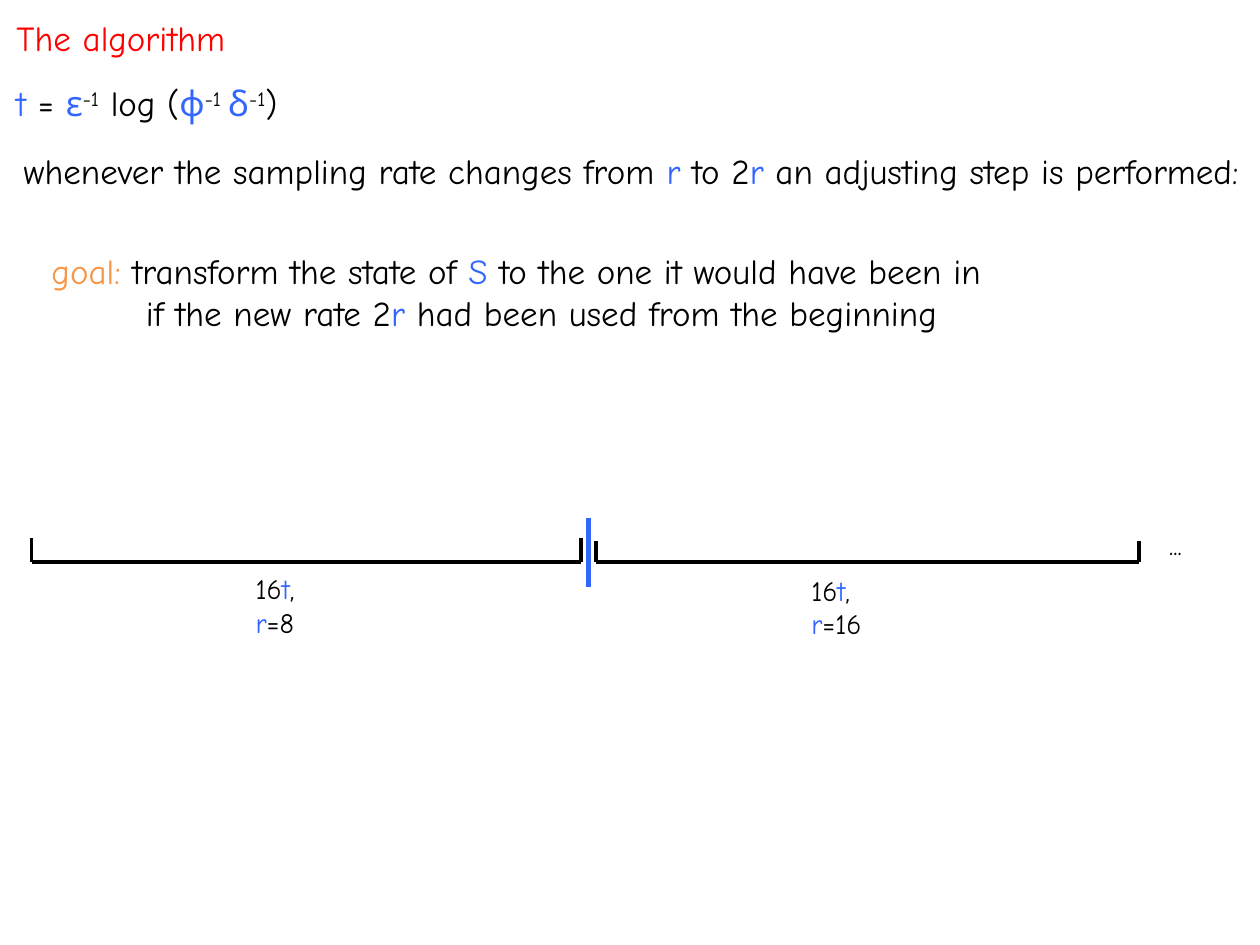
from lxml.etree import SubElement
from pptx import Presentation
from pptx.dml.color import RGBColor
from pptx.enum.shapes import MSO_CONNECTOR
from pptx.enum.text import MSO_ANCHOR, MSO_AUTO_SIZE, PP_ALIGN
from pptx.oxml.ns import qn
from pptx.util import Inches, Pt

BLACK = RGBColor(0x00, 0x00, 0x00)
BLUE = RGBColor(0x33, 0x66, 0xFF)
RED = RGBColor(0xFF, 0x00, 0x00)
ORANGE = RGBColor(0xF7, 0x96, 0x46)
FONT = "Comic Neue"
AXIS_Y = 4.46


def add_span(paragraph, text, size, color=BLACK, raised=False):
    span = paragraph.add_run()
    span.text = text
    span.font.color.rgb = color
    for name, value in {"name": FONT, "size": Pt(size)}.items():
        setattr(span.font, name, value)
    if raised:
        span.font._element.set("baseline", "30000")


def write_text(box, lines, size, hanging=0):
    """Fill box; each line is a list of (text, color, raised) spans.

    Lines after the first are indented by hanging inches.
    """
    frame = box.text_frame
    settings = {
        "word_wrap": True,
        "auto_size": MSO_AUTO_SIZE.NONE,
        "vertical_anchor": MSO_ANCHOR.TOP,
    }
    for name, value in settings.items():
        setattr(frame, name, value)
    for number, spans in enumerate(lines):
        paragraph = frame.add_paragraph() if number else frame.paragraphs[0]
        paragraph.alignment = PP_ALIGN.LEFT
        if number and hanging:
            paragraph._p.get_or_add_pPr().set("marL", str(Inches(hanging)))
        for span in spans:
            add_span(paragraph, span[0], size, *span[1:])


def add_text(page, place, lines, size=20, hanging=0):
    box = page.shapes.add_textbox(*map(Inches, place))
    write_text(box, lines, size, hanging)


def add_line(shapes, start, end, color=BLACK, width=2):
    line = shapes.add_connector(
        MSO_CONNECTOR.STRAIGHT, *map(Inches, (*start, *end)))
    line.line.color.rgb = color
    line.line.width = Pt(width)
    SubElement(line._element.spPr, qn("a:effectLst"))


def add_interval(page, left, right, tick_top):
    """Draw a time interval as a base line with a tick at both ends."""
    shapes = page.shapes.add_group_shape().shapes
    add_line(shapes, (left, AXIS_Y), (right, AXIS_Y))
    for x in (left, right):
        add_line(shapes, (x, AXIS_Y), (x, tick_top))


def add_rate_label(page, place, rate):
    add_text(page, place, [
        [("16",), ("t", BLUE), (",",)],
        [("r", BLUE), (f"={rate}",)],
    ], size=16)


def add_title(page, text):
    title = page.shapes.title
    place = {"left": 0.03, "top": 0.08, "width": 9.69, "height": 0.44}
    for name, value in place.items():
        setattr(title, name, Inches(value))
    write_text(title, [[(text, RED)]], 20)


def main():
    deck = Presentation()
    deck.slide_width, deck.slide_height = Inches(10), Inches(7.5)
    page = deck.slides.add_slide(deck.slide_layouts[5])

    add_title(page, "The algorithm")
    add_text(page, (0.03, 0.6, 9.94, 0.44), [[
        ("t ", BLUE), ("= ",), ("ε", BLUE), ("-1", BLACK, True),
        (" log (",), ("ϕ", BLUE), ("-1 ", BLACK, True),
        ("δ", BLUE), ("-1", BLACK, True), (")",),
    ]])
    add_text(page, (0.09, 1.14, 9.94, 0.77), [[
        ("whenever the sampling rate changes from ",), ("r", BLUE),
        (" to 2",), ("r", BLUE), (" an adjusting step is performed:",),
    ]])
    add_text(page, (0.31, 1.93, 8.58, 0.77), [
        [("goal:", ORANGE), (" transform the state of ",), ("S", BLUE),
         (" to the one it would have been in",)],
        [("if the new rate 2",), ("r", BLUE),
         (" had been used from the beginning",)],
    ], hanging=0.75)

    add_interval(page, 0.25, 4.61, 4.27)
    add_interval(page, 4.73, 9.04, 4.29)
    add_rate_label(page, (1.93, 4.49, 0.62, 0.64), 8)
    add_rate_label(page, (6.34, 4.5, 0.79, 0.64), 16)
    add_text(page, (9.18, 4.14, 0.53, 0.37), [[("...",)]], size=16)
    add_line(page.shapes, (4.67, 4.11), (4.67, 4.66), BLUE, 3)

    deck.save("out.pptx")


if __name__ == "__main__":
    main()
